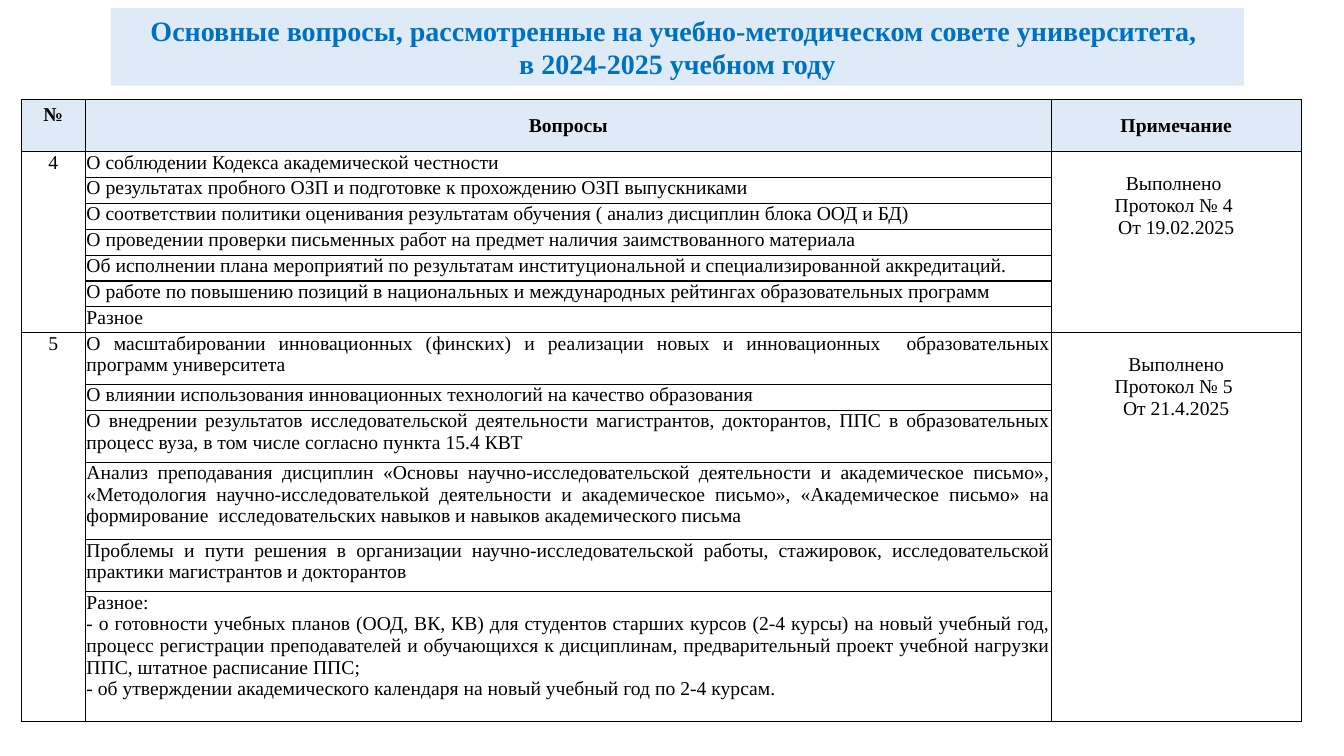
from dataclasses import dataclass

from lxml.etree import SubElement
from pptx import Presentation
from pptx.dml.color import RGBColor
from pptx.enum.text import MSO_ANCHOR as Anchor, MSO_AUTO_SIZE as AutoSize, PP_ALIGN as Align
from pptx.oxml.ns import qn
from pptx.util import Pt

TITLE = [
    "Основные вопросы, рассмотренные на учебно-методическом совете университета, ",
    "в 2024-2025 учебном году",
]
HEADERS = ["№", "Вопросы", "Примечание"]

# Each question: (height in row units, paragraphs)
MEETINGS = [
    {
        "number": "4",
        "note": ["Выполнено ", "Протокол № 4 ", "От 19.02.2025"],
        "questions": [
            (1, ["О соблюдении Кодекса академической честности "]),
            (1, ["О результатах пробного ОЗП и подготовке к прохождению ОЗП выпускниками "]),
            (1, ["О соответствии политики оценивания результатам обучения "
                 "( анализ дисциплин блока ООД и БД) "]),
            (1, ["О проведении проверки письменных работ на предмет наличия "
                 "заимствованного материала "]),
            (1, ["Об исполнении плана мероприятий по результатам институциональной "
                 "и специализированной аккредитаций."]),
            (1, ["О работе по повышению позиций в национальных и международных "
                 "рейтингах образовательных программ"]),
            (1, ["Разное"]),
        ],
    },
    {
        "number": "5",
        "note": [" Выполнено ", "Протокол № 5 ", "От 21.4.2025"],
        "questions": [
            (2, ["О масштабировании инновационных (финских) и реализации новых "
                 "и инновационных  образовательных программ университета"]),
            (1, ["О влиянии использования инновационных технологий на качество образования"]),
            (2, ["О внедрении результатов исследовательской деятельности магистрантов, "
                 "докторантов, ППС в образовательных процесс вуза, в том числе "
                 "согласно пункта 15.4 КВТ "]),
            (3, ["Анализ преподавания дисциплин «Основы научно-исследовательской "
                 "деятельности и академическое письмо», «Методология "
                 "научно-исследователькой деятельности и академическое письмо», "
                 "«Академическое письмо» на формирование  исследовательских навыков "
                 "и навыков академического письма "]),
            (2, ["Проблемы и пути решения в организации научно-исследовательской работы, "
                 "стажировок, исследовательской практики магистрантов и докторантов "]),
            (5, ["Разное:",
                 "- о готовности учебных планов (ООД, ВК, КВ) для студентов старших "
                 "курсов (2-4 курсы) на новый учебный год, процесс регистрации "
                 "преподавателей и обучающихся к дисциплинам, предварительный проект "
                 "учебной нагрузки ППС, штатное расписание ППС; ",
                 "- об утверждении академического календаря на новый учебный год "
                 "по 2-4 курсам."]),
        ],
    },
]


@dataclass(frozen=True)
class Theme:
    font: str = "Times New Roman"
    title_size: int = 20
    body_size: int = 14
    title_color: str = "0070C0"
    text_color: str = "000000"
    band: str = "DEEBF7"
    border: str = "000000"


THEME = Theme()
TITLE_BOX = (79.2, 5.8, 809.3, 55.4)
TABLE_LEFT, TABLE_TOP = 15.1, 71.3
COLUMN_WIDTHS = (46, 689.8, 178.6)
ROW_UNIT = 18.5
HEADER_UNITS = 2
LINE = 15.5


def write(frame, lines, align, size, color, bold=False):
    frame.text = "\n".join(lines)
    for para in frame.paragraphs:
        para.alignment = align
        for span in para.runs:
            font = span.font
            font.name, font.size, font.bold = THEME.font, Pt(size), bold
            font.color.rgb = RGBColor.from_string(color)


def draw_borders(cell):
    properties = cell._tc.get_or_add_tcPr()
    for index, side in enumerate(("a:lnL", "a:lnR", "a:lnT", "a:lnB")):
        line = properties.makeelement(qn(side), {"w": str(Pt(1))})
        fill = SubElement(line, qn("a:solidFill"))
        SubElement(fill, qn("a:srgbClr"), val=THEME.border)
        properties.insert(index, line)


def write_cell(cell, lines, align, bold=False, anchor=Anchor.TOP, top=0, bottom=0):
    cell.margin_left = cell.margin_right = Pt(0.7)
    cell.margin_top, cell.margin_bottom = Pt(top), Pt(bottom)
    cell.vertical_anchor = anchor
    write(cell.text_frame, lines, align, THEME.body_size, THEME.text_color, bold)


def add_title(slide):
    title = slide.shapes.title
    title.left, title.top, title.width, title.height = map(Pt, TITLE_BOX)
    title.fill.solid()
    title.fill.fore_color.rgb = RGBColor.from_string(THEME.band)
    frame = title.text_frame
    frame.auto_size, frame.word_wrap = AutoSize.NONE, True
    frame.vertical_anchor = Anchor.MIDDLE
    write(frame, TITLE, Align.CENTER, THEME.title_size, THEME.title_color, bold=True)


def add_questions_table(slide):
    units = [HEADER_UNITS] + [height for meeting in MEETINGS
                              for height, _ in meeting["questions"]]
    table = slide.shapes.add_table(
        len(units), len(HEADERS), Pt(TABLE_LEFT), Pt(TABLE_TOP),
        Pt(sum(COLUMN_WIDTHS)), Pt(sum(units) * ROW_UNIT)).table
    table.first_row = table.horz_banding = False
    for column, width in zip(table.columns, COLUMN_WIDTHS):
        column.width = Pt(width)
    for row, height in zip(table.rows, units):
        row.height = Pt(height * ROW_UNIT)
    for cell in table.iter_cells():
        cell.fill.background()
        draw_borders(cell)

    for index, header in enumerate(HEADERS):
        cell = table.cell(0, index)
        cell.fill.solid()
        cell.fill.fore_color.rgb = RGBColor.from_string(THEME.band)
        write_cell(cell, [header], Align.CENTER, bold=True, anchor=Anchor.MIDDLE,
                   bottom=0 if index else LINE)

    first = 1
    for meeting in MEETINGS:
        last = first + len(meeting["questions"]) - 1
        for column in (0, 2):
            table.cell(first, column).merge(table.cell(last, column))
        write_cell(table.cell(first, 0), [meeting["number"]], Align.CENTER)
        write_cell(table.cell(first, 2), meeting["note"], Align.CENTER, top=LINE)
        for row, (_, lines) in enumerate(meeting["questions"], first):
            write_cell(table.cell(row, 1), lines, Align.JUSTIFY)
        first = last + 1


def main():
    deck = Presentation()
    deck.slide_width, deck.slide_height = Pt(960), Pt(540)
    slide = deck.slides.add_slide(deck.slide_layouts[5])
    add_questions_table(slide)
    add_title(slide)
    deck.save("out.pptx")


if __name__ == "__main__":
    main()
